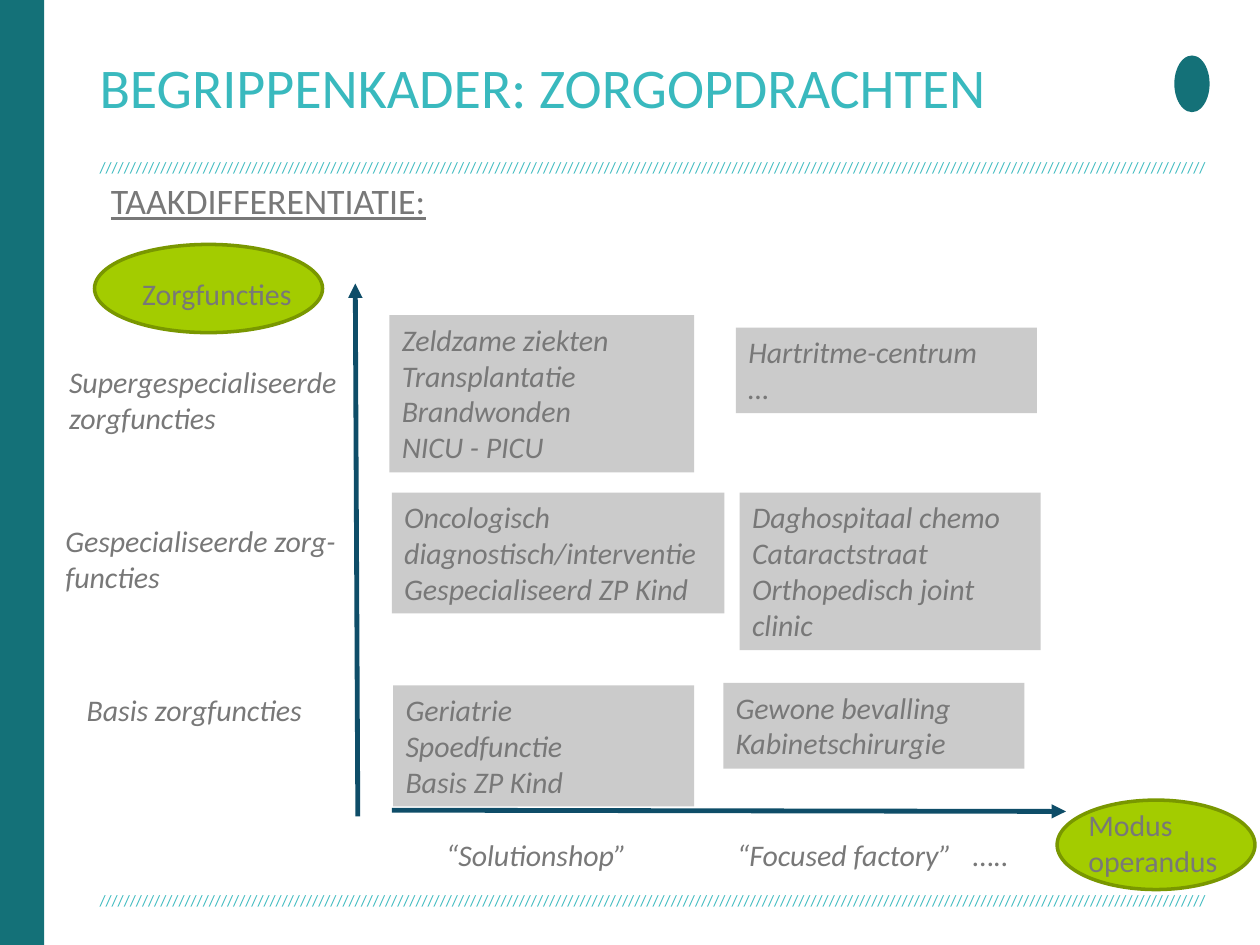
import lxml.etree
import pptx
import pptx.dml.color
import pptx.enum.shapes
import pptx.enum.text
import pptx.oxml.ns
import pptx.util

Inches = pptx.util.Inches
Shapes = pptx.enum.shapes.MSO_SHAPE
Anchor = pptx.enum.text.MSO_ANCHOR
AutoSize = pptx.enum.text.MSO_AUTO_SIZE

TITLE = "BEGRIPPENKADER: ZORGOPDRACHTEN"
SUBTITLE = "TAAKDIFFERENTIATIE:"
HATCH = "/" * 182
HATCH_TOPS = (1.25, 7.07)

OVALS = [(8.39, 6.35, 1.57, 0.71), (0.75, 1.94, 1.81, 0.7)]
AXES = [((3.11, 6.43), (8.46, 6.44)), ((2.84, 6.48), (2.82, 2.25))]

AXIS_NAMES = [
    ("Zorgfuncties", (1.03, 2.14, 1.8, 0.39)),
    ("Modus operandus", (8.54, 6.35, 1.3, 0.68)),
]
AXIS_LEVELS = [
    ("Supergespecialiseerde zorgfuncties", (0.45, 2.84, 2.36, 0.68)),
    ("Gespecialiseerde zorg- functies", (0.42, 4.1, 2.53, 0.68)),
    ("Basis zorgfuncties", (0.59, 5.44, 2.36, 0.39)),
    ("“Solutionshop”", (3.44, 6.59, 1.68, 0.39)),
    ("“Focused factory”", (5.75, 6.59, 2.2, 0.39)),
]
MORE_MODES = ("…..", (7.62, 6.59, 0.69, 0.39))
CARE_TASKS = [
    (["Zeldzame ziekten", "Transplantatie", "Brandwonden", "NICU - PICU"],
     (3.09, 2.5, 2.42, 1.25)),
    (["Hartritme-centrum", "…"], (5.84, 2.6, 2.39, 0.68)),
    (["Oncologisch diagnostisch/interventie", "Gespecialiseerd ZP Kind"],
     (3.11, 3.91, 2.64, 0.96)),
    (["Daghospitaal chemo", "Cataractstraat", "Orthopedisch joint clinic"],
     (5.87, 3.91, 2.39, 1.25)),
    (["Geriatrie", "Spoedfunctie", "Basis ZP Kind"], (3.12, 5.44, 2.39, 0.96)),
    (["Gewone bevalling", "Kabinetschirurgie"], (5.74, 5.42, 2.39, 0.68)),
]

THEME = {
    "font": "Calibri",
    "teal": "147178", "aqua": "39B9BE", "grey": "787878", "panel": "CBCBCB",
    "lime": "A3CC00", "olive": "799700", "navy": "0E4D68",
    "title": 32, "subtitle": 20.5, "body": 17.1, "hatch": 9,
    "oval_line": 2, "axis_line": 2.75,
}
FLUSH = dict.fromkeys(("margin_left", "margin_top", "margin_right", "margin_bottom"), 0)
FIXED = {"word_wrap": True, "auto_size": AutoSize.NONE, **FLUSH}
CENTRED = {**FIXED, "vertical_anchor": Anchor.MIDDLE}
GROWING = {"word_wrap": True, "auto_size": AutoSize.SHAPE_TO_FIT_TEXT,
           "vertical_anchor": Anchor.TOP}


def apply(target, values):
    for name, value in values.items():
        setattr(target, name, value)


def colour(name):
    return pptx.dml.color.RGBColor.from_string(THEME[name])


def write(holder, lines, frame_format, size, tint, **font_format):
    frame = holder.text_frame
    apply(frame, frame_format)
    frame.text = "\n".join(lines)
    for paragraph in frame.paragraphs:
        paragraph.alignment = pptx.enum.text.PP_ALIGN.LEFT
        for run in paragraph.runs:
            apply(run.font, {"name": THEME["font"],
                             "size": pptx.util.Pt(THEME[size]), **font_format})
            run.font.color.rgb = colour(tint)


def add_label(slide, text, box, *style, **font_format):
    label = slide.shapes.add_textbox(*map(Inches, box))
    write(label, [text], *style, **font_format)


def add_panel(slide, kind, box, fill, border=None):
    panel = slide.shapes.add_shape(kind, *map(Inches, box))
    panel.shadow.inherit = False
    panel.fill.solid()
    panel.fill.fore_color.rgb = colour(fill)
    if border:
        panel.line.color.rgb = colour(border)
        panel.line.width = pptx.util.Pt(THEME["oval_line"])
    else:
        panel.line.fill.background()
    return panel


def add_axis(slide, start, end):
    axis = slide.shapes.add_connector(
        pptx.enum.shapes.MSO_CONNECTOR.STRAIGHT, *map(Inches, start + end))
    axis.line.color.rgb = colour("navy")
    axis.line.width = pptx.util.Pt(THEME["axis_line"])
    qn = pptx.oxml.ns.qn
    outline = axis.line._get_or_add_ln()
    lxml.etree.SubElement(outline, qn("a:tailEnd"), type="triangle")
    lxml.etree.SubElement(outline.getparent(), qn("a:effectLst"))


def main():
    deck = pptx.Presentation()
    apply(deck, {"slide_width": Inches(10), "slide_height": Inches(7.5)})
    slide = deck.slides.add_slide(deck.slide_layouts[5])

    add_panel(slide, Shapes.RECTANGLE, (0, 0, 0.35, 7.5), "teal")
    add_panel(slide, Shapes.OVAL, (9.32, 0.44, 0.28, 0.45), "teal")
    for top in HATCH_TOPS:
        add_label(slide, HATCH, (0.79, top, 8.9, 0.25), FIXED, "hatch", "aqua")

    title = slide.shapes.title
    apply(title, {"left": Inches(0.79), "top": Inches(0.13),
                  "width": Inches(8.35), "height": Inches(1.1)})
    write(title, [TITLE], CENTRED, "title", "aqua")
    add_label(slide, SUBTITLE, (0.88, 1.15, 5.9, 0.88), CENTRED,
              "subtitle", "grey", underline=True)

    for box in OVALS:
        add_panel(slide, Shapes.OVAL, box, "lime", "olive")
    for lines, box in CARE_TASKS:
        panel = add_panel(slide, Shapes.RECTANGLE, box, "panel")
        write(panel, lines, GROWING, "body", "grey", italic=True)
    for start, end in AXES:
        add_axis(slide, start, end)
    for text, box in AXIS_LEVELS:
        add_label(slide, text, box, GROWING, "body", "grey", italic=True)
    for text, box in [*AXIS_NAMES, MORE_MODES]:
        add_label(slide, text, box, GROWING, "body", "grey")

    deck.save("out.pptx")


if __name__ == "__main__":
    main()
